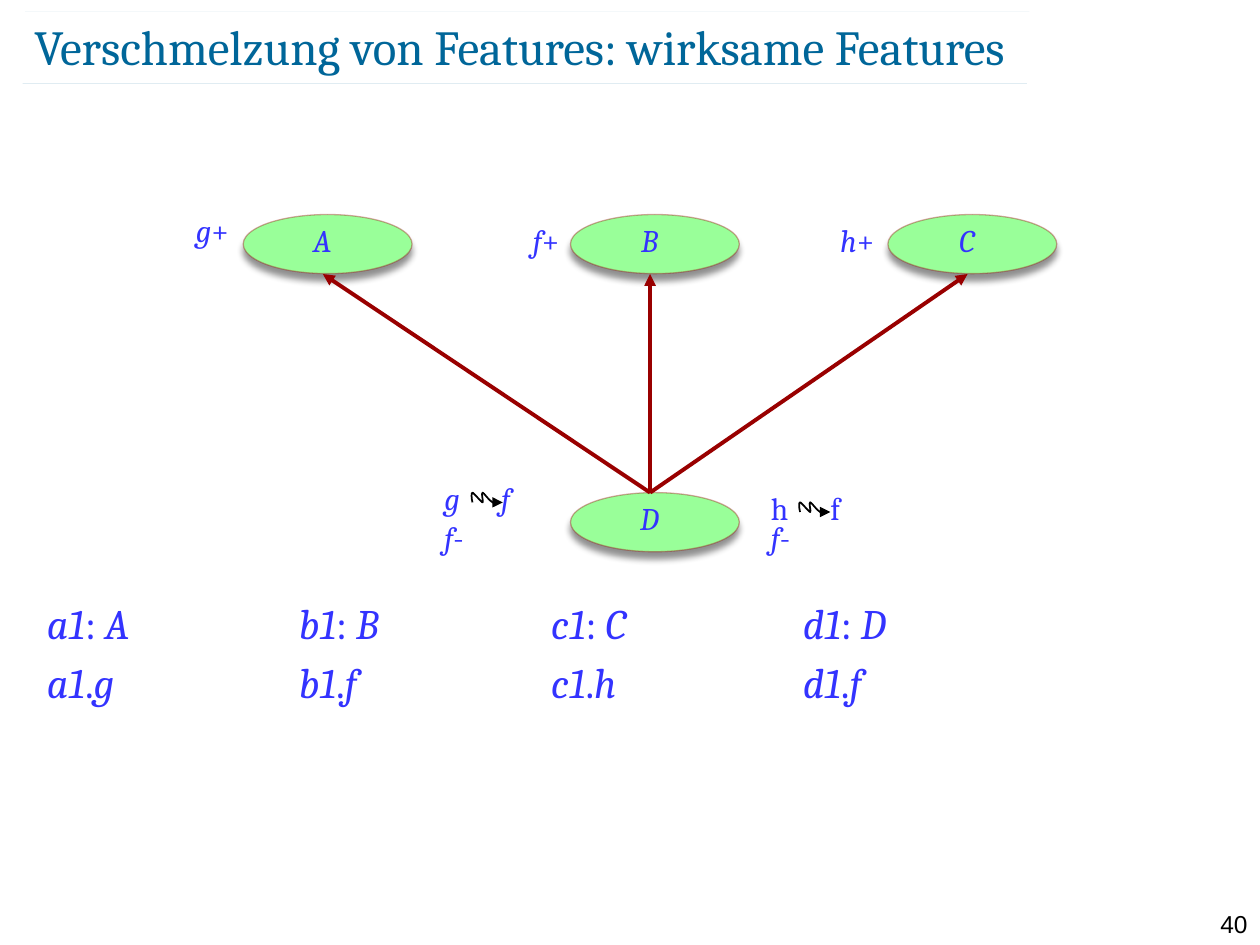
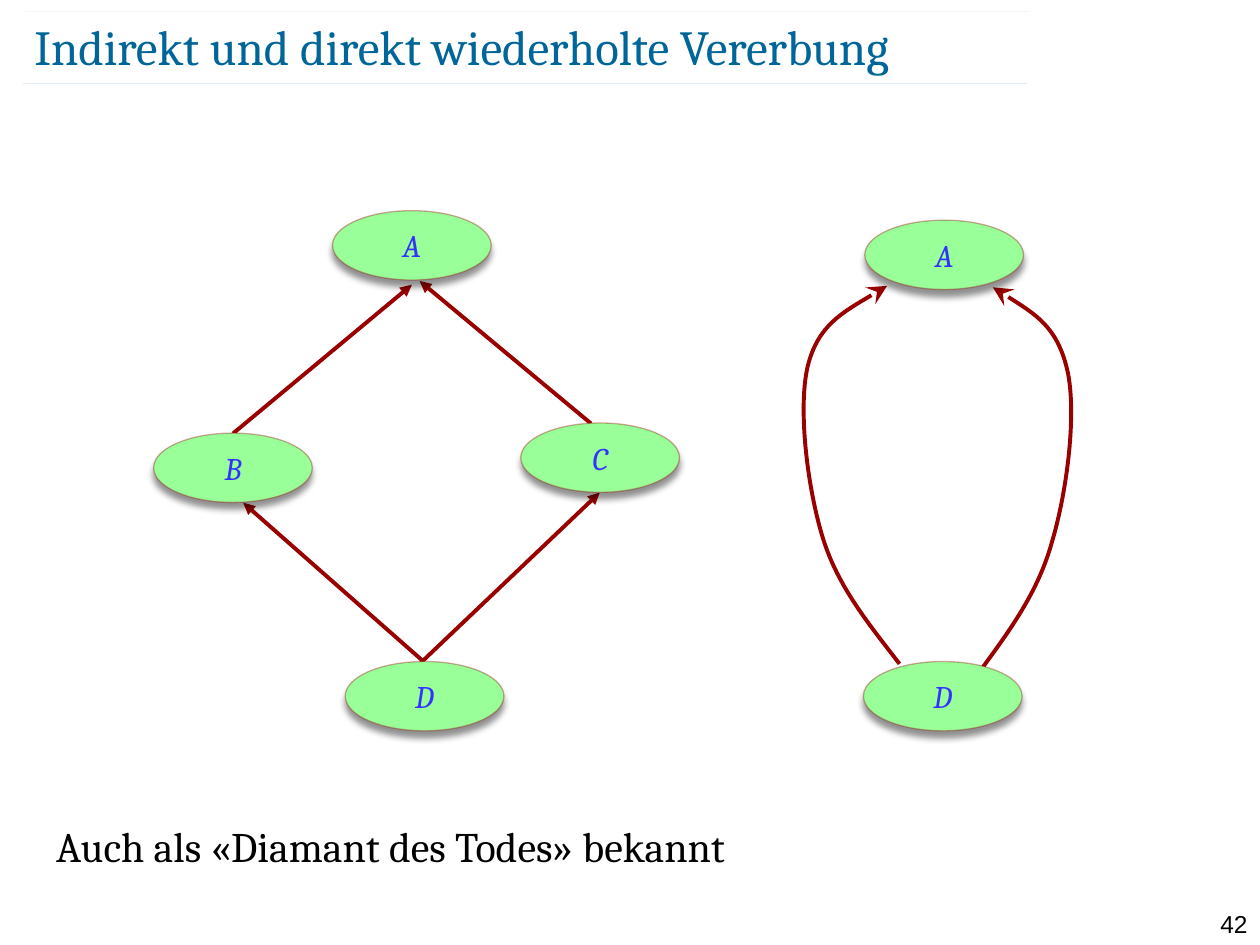
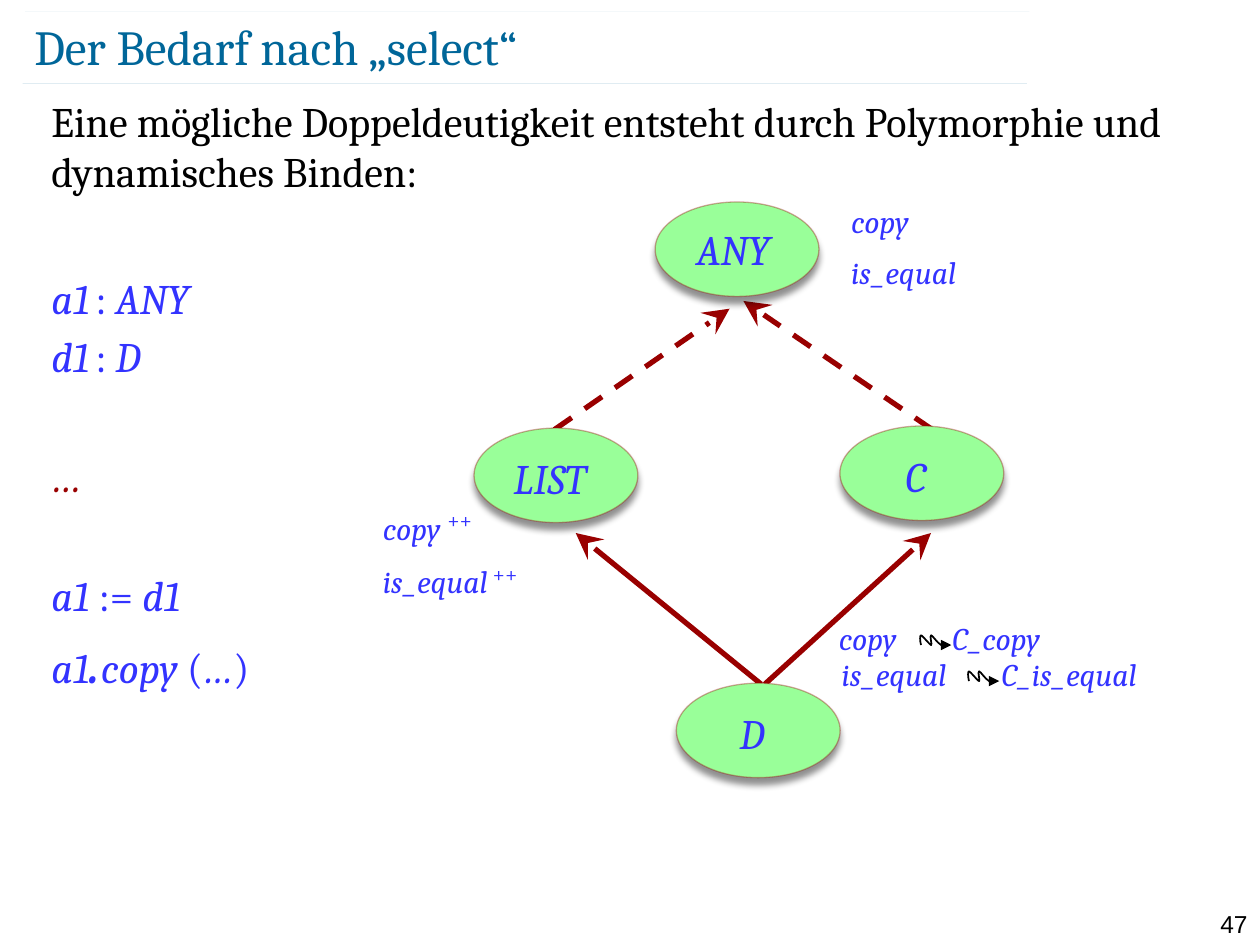
"""Build three slides on feature merging and repeated inheritance."""
from dataclasses import dataclass
from typing import NamedTuple, Optional

from lxml.etree import SubElement
from pptx import Presentation
from pptx.dml.color import RGBColor
from pptx.dml.line import LineFormat
from pptx.enum.dml import MSO_LINE
from pptx.enum.shapes import MSO_CONNECTOR, MSO_SHAPE
from pptx.enum.text import MSO_ANCHOR, PP_ALIGN
from pptx.oxml.ns import qn
from pptx.slide import Slide
from pptx.text.text import TextFrame
from pptx.util import Pt

COLORS = {
    "title": "006699",
    "code": "3333FF",
    "prose": "000000",
    "arrow": "990000",
    "node": "99FF99",
    "shadow": "000000",
}
SERIF = "Cambria"
HEAD_SIZES = {"triangle": "med", "stealth": "lg"}
LINE_GAP = 4.8
SECTION_GAP = 39.5


class Point(NamedTuple):
    x: float
    y: float


class Box(NamedTuple):
    left: float
    top: float
    width: float
    height: float

    def lengths(self) -> list[Pt]:
        return [Pt(length) for length in self]


@dataclass(frozen=True)
class Fragment:
    text: str
    size: float = 18
    italic: bool = True
    color: str = "code"
    font: str = SERIF
    raised: bool = False


@dataclass(frozen=True)
class Line:
    fragments: list[Fragment]
    before: float = 0
    align: PP_ALIGN = PP_ALIGN.LEFT
    tabs: tuple[float, ...] = ()


@dataclass(frozen=True)
class NodeStyle:
    width: float
    height: float
    size: float
    caption: Optional[Box] = None


@dataclass(frozen=True)
class Node:
    name: str
    left: float
    top: float
    nudge: Point = Point(0, 0)


@dataclass(frozen=True)
class Arrow:
    start: Point
    tip: Point


@dataclass(frozen=True)
class ArrowStyle:
    width: float
    head: str
    dash: Optional[MSO_LINE] = None


@dataclass(frozen=True)
class Curve:
    start: Point
    bends: tuple[tuple[Point, Point, Point], ...]


@dataclass(frozen=True)
class Renaming:
    old: str
    new: str
    box: Box
    tab: float
    squiggle: Point
    italic: bool = True


SQUIGGLE = Curve(Point(0.7, 5.6), (
    (Point(0, 2.8), Point(0, 0), Point(0.7, 0)),
    (Point(1.4, 0), Point(5.8, 5.6), Point(6.5, 5.6)),
    (Point(7.2, 5.6), Point(5.4, 0), Point(6.5, 0)),
    (Point(7.2, 0), Point(10, 4.4), Point(12.2, 5.6)),
    (Point(14.4, 6.6), Point(17.2, 5.6), Point(18, 5.6)),
))


def rgb(role: str) -> RGBColor:
    return RGBColor.from_string(COLORS[role])


def alternate(text: str, size: float = 18) -> list[Fragment]:
    """Split at bars into italic and upright parts in turn."""
    return [Fragment(part, size, index % 2 == 0)
            for index, part in enumerate(text.split("|"))]


def write(frame: TextFrame, lines: list[Line]) -> None:
    for index, line in enumerate(lines):
        paragraph = frame.add_paragraph() if index else frame.paragraphs[0]
        if line.tabs:
            stops = SubElement(paragraph._p.get_or_add_pPr(), qn("a:tabLst"))
            for stop in line.tabs:
                SubElement(stops, qn("a:tab"), pos=str(Pt(stop)), algn="l")
        paragraph.alignment = line.align
        paragraph.space_before = Pt(line.before)
        for fragment in line.fragments:
            run = paragraph.add_run()
            run.text = fragment.text
            values = {"name": fragment.font, "size": Pt(fragment.size), "italic": fragment.italic}
            for attribute, value in values.items():
                setattr(run.font, attribute, value)
            run.font.color.rgb = rgb(fragment.color)
            if fragment.raised:
                run._r.get_or_add_rPr().set("baseline", "30000")


def add_text(slide: Slide, box: Box, lines: list[Line], inset: bool = True,
             anchor: MSO_ANCHOR = MSO_ANCHOR.TOP) -> None:
    frame = slide.shapes.add_textbox(*box.lengths()).text_frame
    values = {"word_wrap": True, "vertical_anchor": anchor}
    if not inset:
        values |= {f"margin_{side}": Pt(0) for side in ("left", "top", "right", "bottom")}
    for attribute, value in values.items():
        setattr(frame, attribute, value)
    write(frame, lines)


def style_line(line: LineFormat, role: str, width: float, head: Optional[str] = None,
               opacity: Optional[int] = None, dash: Optional[MSO_LINE] = None) -> None:
    line.color.rgb = rgb(role)
    line.width = Pt(width)
    outline = line._get_or_add_ln()
    if dash:
        line.dash_style = dash
    if opacity:
        SubElement(outline.find(".//" + qn("a:srgbClr")), qn("a:alpha"), val=str(opacity * 1000))
    if head:
        size = HEAD_SIZES[head]
        SubElement(outline, qn("a:tailEnd"), type=head, w=size, len=size)


def connect(slide: Slide, start: Point, end: Point) -> LineFormat:
    ends = [Pt(value) for value in (*start, *end)]
    connector = slide.shapes.add_connector(MSO_CONNECTOR.STRAIGHT, *ends)
    SubElement(connector._element.spPr, qn("a:effectLst"))
    return connector.line


def add_arrows(slide: Slide, arrows: list[Arrow], style: ArrowStyle) -> None:
    for arrow in arrows:
        style_line(connect(slide, arrow.start, arrow.tip), "arrow", style.width,
                   head=style.head, dash=style.dash)


def add_curve(slide: Slide, curve: Curve, role: str, width: float, head: str,
              offset: Point = Point(0, 0)) -> None:
    controls = [curve.start, *(point for bend in curve.bends for point in bend)]
    first, *rest = [(Pt(p.x + offset.x), Pt(p.y + offset.y)) for p in controls]
    builder = slide.shapes.build_freeform(*first)
    builder.add_line_segments(rest, close=False)
    shape = builder.convert_to_shape()
    outline = shape._element.find(".//" + qn("a:pathLst"))[0]
    segments = outline.findall(qn("a:lnTo"))
    for start in range(0, len(segments), 3):
        bend = SubElement(outline, qn("a:cubicBezTo"))
        for segment in segments[start:start + 3]:
            bend.append(segment[0])
            outline.remove(segment)
    shape.shadow.inherit = False
    shape.fill.background()
    style_line(shape.line, role, width, head=head)


def add_nodes(slide: Slide, nodes: list[Node], style: NodeStyle) -> None:
    for node in nodes:
        box = Box(node.left, node.top, style.width, style.height)
        ellipse = slide.shapes.add_shape(MSO_SHAPE.OVAL, *box.lengths())
        ellipse.shadow.inherit = False
        ellipse.fill.solid()
        ellipse.fill.fore_color.rgb = rgb("node")
        style_line(ellipse.line, "arrow", 0.75, opacity=34)
        effects = ellipse._element.spPr.find(qn("a:effectLst"))
        shadow = SubElement(effects, qn("a:outerShdw"), blurRad=str(Pt(4)), dist=str(Pt(4)),
                            dir="5400000", algn="ctr", rotWithShape="0")
        tone = SubElement(shadow, qn("a:srgbClr"), val=COLORS["shadow"])
        SubElement(tone, qn("a:alpha"), val="43000")
        label = [Line([Fragment(node.name, style.size)], align=PP_ALIGN.CENTER)]
        if style.caption:
            dx, dy, width, height = style.caption
            place = Point(node.left + dx + node.nudge.x, node.top + dy + node.nudge.y)
            add_text(slide, Box(*place, width, height), label)
        else:
            ellipse.text_frame.word_wrap = False
            ellipse.text_frame.vertical_anchor = MSO_ANCHOR.MIDDLE
            write(ellipse.text_frame, label)


def add_renamings(slide: Slide, renamings: list[Renaming]) -> None:
    for renaming in renamings:
        words = Fragment(f"{renaming.old}\t{renaming.new}", italic=renaming.italic)
        add_text(slide, renaming.box, [Line([words], tabs=(renaming.tab,))])
        add_curve(slide, SQUIGGLE, "prose", 1, "triangle", renaming.squiggle)


def start_slide(deck: Presentation, title: str, number: int) -> Slide:
    slide = deck.slides.add_slide(deck.slide_layouts[6])
    for left, top in ((13, 47.9), (14.4, 6.5)):
        rule = connect(slide, Point(left, top), Point(left + 573.8, top))
        style_line(rule, "title", 0.1, opacity=35)
    page = Fragment(str(number), 14, False, "prose", "Arial")
    add_text(slide, Box(680.4, 515.8, 39.6, 17.3), [Line([page], align=PP_ALIGN.RIGHT)])
    heading = Fragment(title, 28, False, "title")
    add_text(slide, Box(19.6, 9, 625.7, 34.6), [Line([heading])], inset=False,
             anchor=MSO_ANCHOR.MIDDLE)
    return slide


def build_effective_features(deck: Presentation) -> None:
    slide = start_slide(deck, "Verschmelzung von Features: wirksame Features", 40)
    columns = (144, 288, 432)
    add_text(slide, Box(19.7, 338.1, 676.8, 80), [
        Line(alternate("a1|: |A\tb1|: |B\tc1|: |C\td1|: |D", 24), tabs=columns),
        Line(alternate("a1|.|g\tb1|.|f\tc1|.|h\td1|.|f", 24), LINE_GAP, tabs=columns),
    ])
    parents = [Node("A", 139, 122.6), Node("B", 326, 122.6), Node("C", 507.4, 122.6)]
    heir = Node("D", 326, 281.5)
    add_nodes(slide, [*parents, heir], NodeStyle(96.5, 33.8, 18, Box(22.5, 0, 45.4, 28.8)))
    joint = 45.5
    add_arrows(slide, [Arrow(Point(heir.left + joint, heir.top),
                             Point(parent.left + joint, parent.top + 34))
                       for parent in parents], ArrowStyle(2.25, "triangle"))
    features = {"g|+": Point(104.8, 116.8), "f|+": Point(297.4, 122.6), "h|+": Point(473, 122.6)}
    undefined = [("f|-", Point(left, 292.3)) for left in (246.8, 433.4)]
    for feature, place in [*features.items(), *undefined]:
        add_text(slide, Box(*place, 39.6, 28.8), [Line(alternate(feature))])
    add_renamings(slide, [
        Renaming("g", "f", Box(246.8, 270, 67.7, 28.8), 32.5, Point(269.3, 281.5)),
        Renaming("h", "f", Box(433.4, 275.8, 67.7, 28.8), 34, Point(456.5, 287), False),
    ])


def build_repeated_inheritance(deck: Presentation) -> None:
    slide = start_slide(deck, "Indirekt und direkt wiederholte Vererbung", 42)
    direct_paths = [
        Curve(Point(514, 379.4), (
            (Point(496.8, 357), Point(478.8, 335.5), Point(470.2, 307.4)),
            (Point(461.5, 279.4), Point(455.8, 234), Point(461.5, 209.5)),
            (Point(467.3, 185.8), Point(487.4, 175), Point(506.9, 163.4)),
        )),
        Curve(Point(560.9, 382.3), (
            (Point(576.7, 360.7), Point(593.3, 338.4), Point(601.2, 309.6)),
            (Point(609.8, 280.8), Point(615.6, 235.4), Point(609.8, 211)),
            (Point(604, 186.5), Point(586, 175.7), Point(567.4, 164.2)),
        )),
    ]
    for inheritance in direct_paths:
        add_curve(slide, inheritance, "arrow", 2.25, "stealth")
    add_arrows(slide, [
        Arrow(Point(133.2, 247.7), Point(235.4, 162.7)),
        Arrow(Point(337.7, 242), Point(239.8, 160.6)),
        Arrow(Point(240.5, 378.7), Point(342.7, 281.5)),
        Arrow(Point(241.2, 377.3), Point(139, 287.3)),
    ], ArrowStyle(2.25, "triangle"))
    add_nodes(slide, [
        Node("A", 190, 120.4), Node("D", 197.3, 378), Node("B", 87.8, 247.5),
        Node("C", 297.6, 241.7), Node("A", 494.2, 125.8), Node("D", 493.4, 378),
    ], NodeStyle(90.7, 39.6, 18))
    remark = Fragment("Auch als «Diamant des Todes» bekannt", 24, False, "prose")
    add_text(slide, Box(32, 468.7, 461.5, 33), [Line([remark])], inset=False)


def declaration(entity: str, kind: str) -> list[Fragment]:
    return [Fragment(entity, 24), Fragment(" ", 16), Fragment(": ", 24, False), Fragment(kind, 24)]


def build_select(deck: Presentation) -> None:
    slide = start_slide(deck, "Der Bedarf nach „select“", 47)
    problem = ("Eine mögliche Doppeldeutigkeit entsteht durch Polymorphie und "
               "dynamisches Binden:")
    add_text(slide, Box(22.3, 50.9, 676.8, 444.2), [
        Line([Fragment(problem, 24, False, "prose")]),
        Line(declaration("a1", "ANY"), 43.4),
        Line(declaration("d1", "D"), LINE_GAP),
        Line([Fragment("…", 24, color="arrow")], SECTION_GAP),
        Line(alternate("a1 |:=| d1", 24), SECTION_GAP),
        Line([Fragment("a1", 24), Fragment(".", 36), *alternate("copy |(|…|)", 24)]),
    ])
    add_text(slide, Box(211.7, 283.3, 118.8, 59.8), [
        Line([Fragment("copy "), Fragment("++", 22, False, raised=True)]),
        Line([Fragment("is_equal"), Fragment(" ++", 22, False, raised=True)], 4),
    ])
    add_renamings(slide, [
        Renaming("copy", "C_copy", Box(472.3, 350, 167.8, 28.8), 64.8, Point(525.6, 363)),
        Renaming("is_equal", "C_is_equal", Box(473.8, 370.8, 208, 28.8), 91.5, Point(553, 383.6)),
    ])
    add_arrows(slide, [
        Arrow(Point(316.8, 245.5), Point(416.9, 176.4)),
        Arrow(Point(532.8, 245.5), Point(424.8, 172)),
    ], ArrowStyle(3, "stealth", MSO_LINE.DASH))
    add_arrows(slide, [
        Arrow(Point(437, 391), Point(532, 304.6)),
        Arrow(Point(435, 391), Point(329, 304.6)),
    ], ArrowStyle(3, "stealth"))
    add_nodes(slide, [
        Node("C", 480, 243.4), Node("LIST", 270.9, 244.6),
        Node("D", 386.5, 390.4), Node("ANY", 374.4, 115.4, Point(1.3, -1.6)),
    ], NodeStyle(93.6, 54, 24, Box(-20, 10.4, 126.7, 36)))
    add_text(slide, Box(479.3, 112, 118.8, 59.8), [
        Line([Fragment("copy")]), Line([Fragment("is_equal")], 7.6),
    ])


def main() -> None:
    deck = Presentation()
    deck.slide_width, deck.slide_height = Pt(720), Pt(540)
    for build in (build_effective_features, build_repeated_inheritance, build_select):
        build(deck)
    deck.save("out.pptx")


if __name__ == "__main__":
    main()
